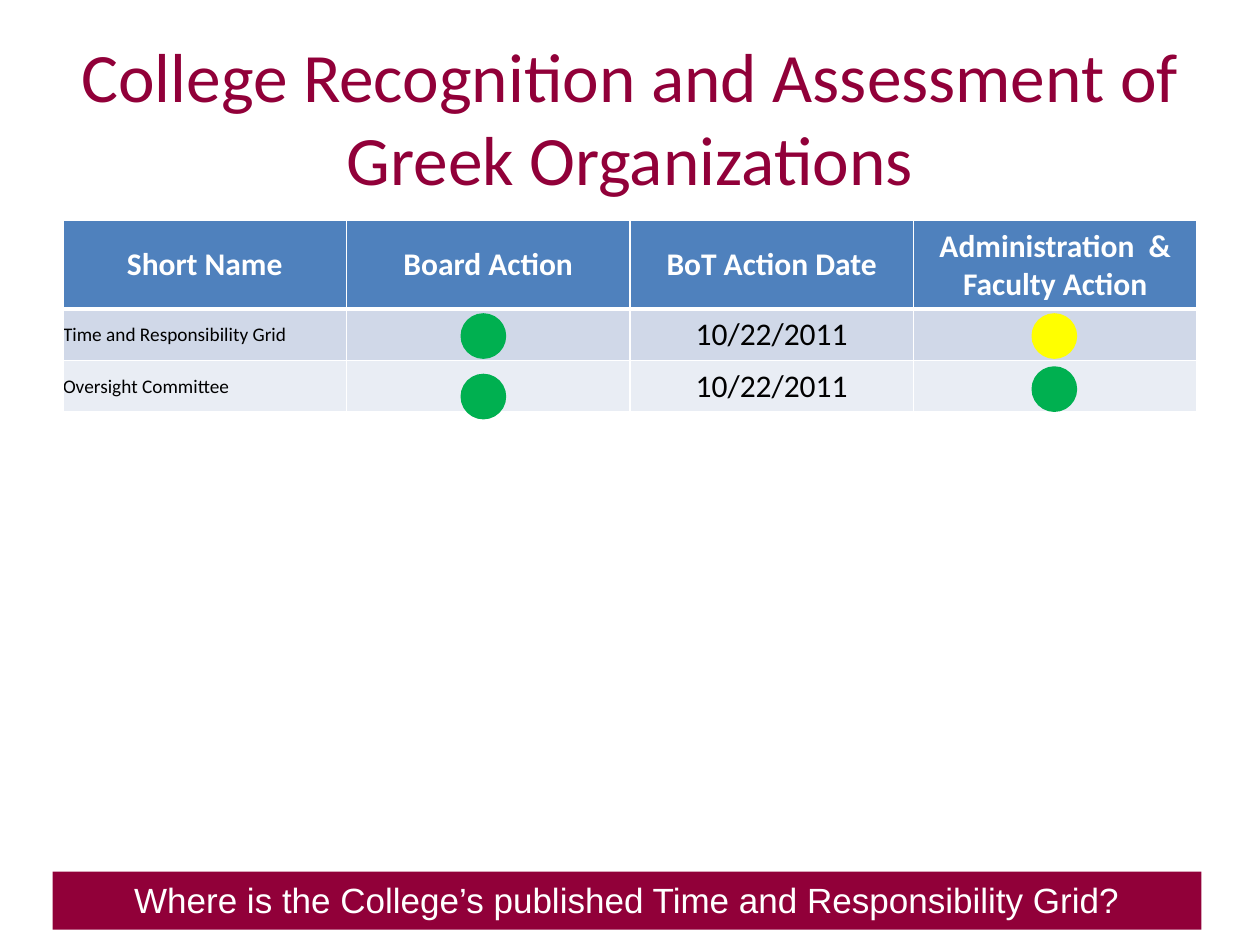
import pptx
import pptx.util
import pptx.dml.color
import pptx.enum.shapes
import pptx.enum.text
import pptx.oxml
import pptx.oxml.ns

Cm, Pt = pptx.util.Cm, pptx.util.Pt
RGB = pptx.dml.color.RGBColor
Align = pptx.enum.text.PP_ALIGN
Anchor = pptx.enum.text.MSO_ANCHOR
Kind = pptx.enum.shapes.MSO_SHAPE

WINE = RGB(0x91, 0x00, 0x39)
BLUE = RGB(0x4F, 0x81, 0xBD)
PALE = RGB(0xD0, 0xD8, 0xE8)
MIST = RGB(0xE9, 0xED, 0xF4)
GREEN = RGB(0x00, 0xB0, 0x50)
YELLOW = RGB(0xFF, 0xFF, 0x00)
WHITE = RGB(0xFF, 0xFF, 0xFF)
BLACK = RGB(0x00, 0x00, 0x00)


class Deck:
    head = dict(name="Calibri", size=Pt(18), bold=True)
    body = dict(name="Calibri", size=Pt(18), bold=False)
    label = dict(name="Calibri", size=Pt(11), bold=False)
    title = dict(name="Calibri", size=Pt(39.6))
    note = dict(name="Arial", size=Pt(20))

    def __init__(self, slide):
        self.slide = slide

    def words(self, frame, text, font, color, align=Align.CENTER):
        para = frame.paragraphs[0]
        para.alignment = align
        run = para.add_run()
        run.text = text
        for key, value in font.items():
            setattr(run.font, key, value)
        run.font.color.rgb = color

    def text(self, box, text, font, color):
        frame = self.slide.shapes.add_textbox(*map(Cm, box)).text_frame
        frame.word_wrap = True
        frame.vertical_anchor = Anchor.MIDDLE
        self.words(frame, text, font, color)

    def shape(self, kind, box, fill, line=None):
        shape = self.slide.shapes.add_shape(kind, *map(Cm, box))
        shape.shadow.inherit = False
        shape.fill.solid()
        shape.fill.fore_color.rgb = fill
        if line:
            shape.line.color.rgb = fill
            shape.line.width = Pt(line)
        else:
            shape.line.fill.background()
        return shape

    def dot(self, left, top, color):
        self.shape(Kind.OVAL, (left, top, 0.85, 0.85), color, 2)

    def bar(self, box, text):
        frame = self.shape(Kind.RECTANGLE, box, WINE).text_frame
        frame.word_wrap = True
        frame.vertical_anchor = Anchor.BOTTOM
        frame.margin_bottom = Cm(0.18)
        self.words(frame, text, self.note, WHITE)

    def edge(self, cell, base):
        props = cell._tc.get_or_add_tcPr()
        widths = dict(L=1, R=1, T=1, B=base)
        for spot, (side, width) in enumerate(widths.items()):
            props.insert(spot, pptx.oxml.parse_xml(
                f'<a:ln{side} {pptx.oxml.ns.nsdecls("a")} w="{Pt(width)}">'
                f'<a:solidFill><a:srgbClr val="{WHITE}"/></a:solidFill>'
                f'</a:ln{side}>'))

    def table(self, box, rows, highs, fills):
        count = len(rows[0])
        table = self.slide.shapes.add_table(
            len(rows), count, *map(Cm, box)).table
        for col in table.columns:
            col.width = Cm(box[2] / count)
        for r, row in enumerate(rows):
            table.rows[r].height = Cm(highs[r])
            for c, text in enumerate(row):
                cell = table.cell(r, c)
                cell.fill.solid()
                cell.fill.fore_color.rgb = fills[r]
                cell.vertical_anchor = Anchor.MIDDLE
                self.edge(cell, 1 if r else 3)
                if not text:
                    continue
                if r == 0:
                    self.words(cell.text_frame, text, self.head, WHITE)
                elif c == 0:
                    for side in ("left", "right", "top", "bottom"):
                        setattr(cell, "margin_" + side, 0)
                    self.words(cell.text_frame, text, self.label, BLACK,
                               Align.LEFT)
                else:
                    self.words(cell.text_frame, text, self.body, BLACK)


def main():
    show = pptx.Presentation()
    show.slide_width, show.slide_height = Cm(25.4), Cm(19.05)
    deck = Deck(show.slides.add_slide(show.slide_layouts[6]))

    # Title
    deck.text((1.27, 0.76, 22.86, 3.18),
              "College Recognition and Assessment of Greek Organizations",
              deck.title, WINE)

    # Action table
    deck.table((1.27, 4.45, 22.86, 3.86), [
        ("Short Name", "Board Action", "BoT Action Date",
         "Administration  & Faculty Action"),
        ("Time and Responsibility Grid", "", "10/22/2011", ""),
        ("Oversight Committee", "", "10/22/2011", ""),
    ], (1.78, 1.04, 1.04), (BLUE, PALE, MIST))

    # Status dots
    board, staff = 9.32, 20.83
    for left, top, color in ((board, 6.35, GREEN), (board, 7.57, GREEN),
                             (staff, 7.42, GREEN), (staff, 6.35, YELLOW)):
        deck.dot(left, top, color)

    # Question bar
    deck.bar((1.06, 17.57, 23.16, 1.17),
             "Where is the College’s published Time and Responsibility Grid?")

    show.save("out.pptx")


if __name__ == "__main__":
    main()
